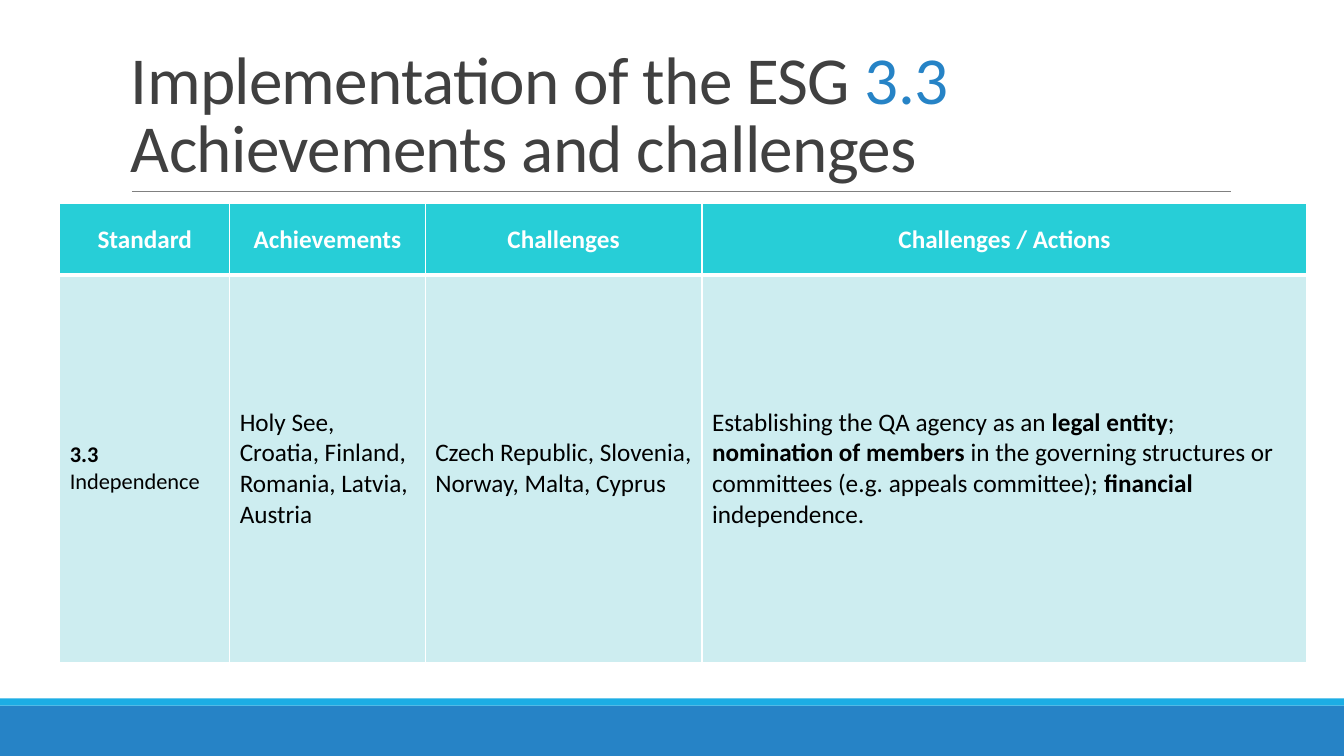
from lxml import etree
from pptx import Presentation
from pptx.dml.color import RGBColor
from pptx.enum import shapes, text
from pptx.oxml.ns import qn
from pptx.util import Pt

WHITE = RGBColor(0xFF, 0xFF, 0xFF)
BLACK = RGBColor(0, 0, 0)
GREY = RGBColor(0x80, 0x80, 0x80)
DARK = RGBColor(0x40, 0x40, 0x40)
BLUE = RGBColor(0x26, 0x83, 0xC6)
SKY = RGBColor(0x1C, 0xAD, 0xE4)
TEAL = RGBColor(0x27, 0xCE, 0xD7)
PALE = RGBColor(0xCD, 0xED, 0xF0)

FONT = "Calibri"
WIDTH, HEIGHT = 960, 540
COLUMNS = [121.4, 139.7, 197.7, 432.2]
ROWS = [51, 276.5]
HEADERS = ["Standard", "Achievements", "Challenges", "Challenges / Actions"]
# Each body cell: font size, then (text, bold) runs
BODY = [
    (16, [("3.3 ", True), ("Independence", False)]),
    (18, [("Holy See, Croatia, Finland, Romania, Latvia, Austria", False)]),
    (18, [("Czech Republic, Slovenia, Norway, Malta, Cyprus", False)]),
    (18, [("Establishing the QA agency as an ", False), ("legal entity", True),
          ("; ", False), ("nomination of members ", True),
          ("in the governing structures or committees "
           "(e.g. appeals committee); ", False),
          ("financial", True), (" independence.", False)]),
]


def add_band(s, top, height, color):
    sp = s.shapes.add_shape(shapes.MSO_SHAPE.RECTANGLE,
                            0, Pt(top), Pt(WIDTH), Pt(height))
    sp.shadow.inherit = False
    sp.fill.solid()
    sp.fill.fore_color.rgb = color
    sp.line.fill.background()


def add_rule(s, left, right, y):
    line = s.shapes.add_connector(shapes.MSO_CONNECTOR.STRAIGHT,
                                  Pt(left), Pt(y), Pt(right), Pt(y))
    line.line.color.rgb = GREY
    line.line.width = Pt(0.5)
    etree.SubElement(line._element.spPr, qn("a:effectLst"))


def add_title(s, runs):
    tf = s.shapes.add_textbox(Pt(86.4), Pt(22.3), Pt(791.3), Pt(114.5)).text_frame
    tf.word_wrap = True
    tf.vertical_anchor = text.MSO_ANCHOR.BOTTOM
    p = tf.paragraphs[0]
    p.line_spacing = 0.85
    p.font.size = Pt(48)
    p.font.name = FONT
    for words, color in runs:
        r = p.add_run()
        r.text = words
        r.font.color.rgb = color
        r.font._element.set("spc", "-50")


def set_borders(cell, **widths):
    """Draw white cell borders; widths are in points by side: L, R, T, B."""
    tcPr = cell._tc.get_or_add_tcPr()
    for i, (side, width) in enumerate(widths.items()):
        ln = etree.Element(qn(f"a:ln{side}"), w=str(Pt(width)))
        fill = etree.SubElement(ln, qn("a:solidFill"))
        etree.SubElement(fill, qn("a:srgbClr"), val=str(WHITE))
        tcPr.insert(i, ln)


def fill_cell(cell, runs, size, color, fill, align):
    cell.fill.solid()
    cell.fill.fore_color.rgb = fill
    cell.vertical_anchor = text.MSO_ANCHOR.MIDDLE
    p = cell.text_frame.paragraphs[0]
    p.alignment = align
    p.font.size = Pt(size)
    p.font.name = FONT
    p.font.color.rgb = color
    for words, bold in runs:
        r = p.add_run()
        r.text = words
        r.font.bold = bold


def add_standards_table(s):
    table = s.shapes.add_table(len(ROWS), len(COLUMNS), Pt(42.7), Pt(145.5),
                               Pt(sum(COLUMNS)), Pt(sum(ROWS))).table
    for row, height in zip(table.rows, ROWS):
        row.height = Pt(height)
    for i, width in enumerate(COLUMNS):
        table.columns[i].width = Pt(width)
        head, body = table.cell(0, i), table.cell(1, i)
        fill_cell(head, [(HEADERS[i], True)], 18, WHITE, TEAL,
                  text.PP_ALIGN.CENTER)
        set_borders(head, L=1, R=1, T=1, B=3)
        size, runs = BODY[i]
        fill_cell(body, runs, size, BLACK, PALE, text.PP_ALIGN.LEFT)
        set_borders(body, L=1, R=1, T=3, B=1)


def main():
    prs = Presentation()
    prs.slide_width, prs.slide_height = Pt(WIDTH), Pt(HEIGHT)
    s = prs.slides.add_slide(prs.slide_layouts[6])
    add_band(s, 504, 36, BLUE)
    add_band(s, 498.8, 5.2, SKY)
    add_rule(s, 94.3, 879, 136.8)
    add_title(s, [("Implementation of the ESG ", DARK), ("3.3 ", BLUE),
                  ("Achievements and challenges", DARK)])
    add_standards_table(s)
    prs.save("out.pptx")


if __name__ == "__main__":
    main()
